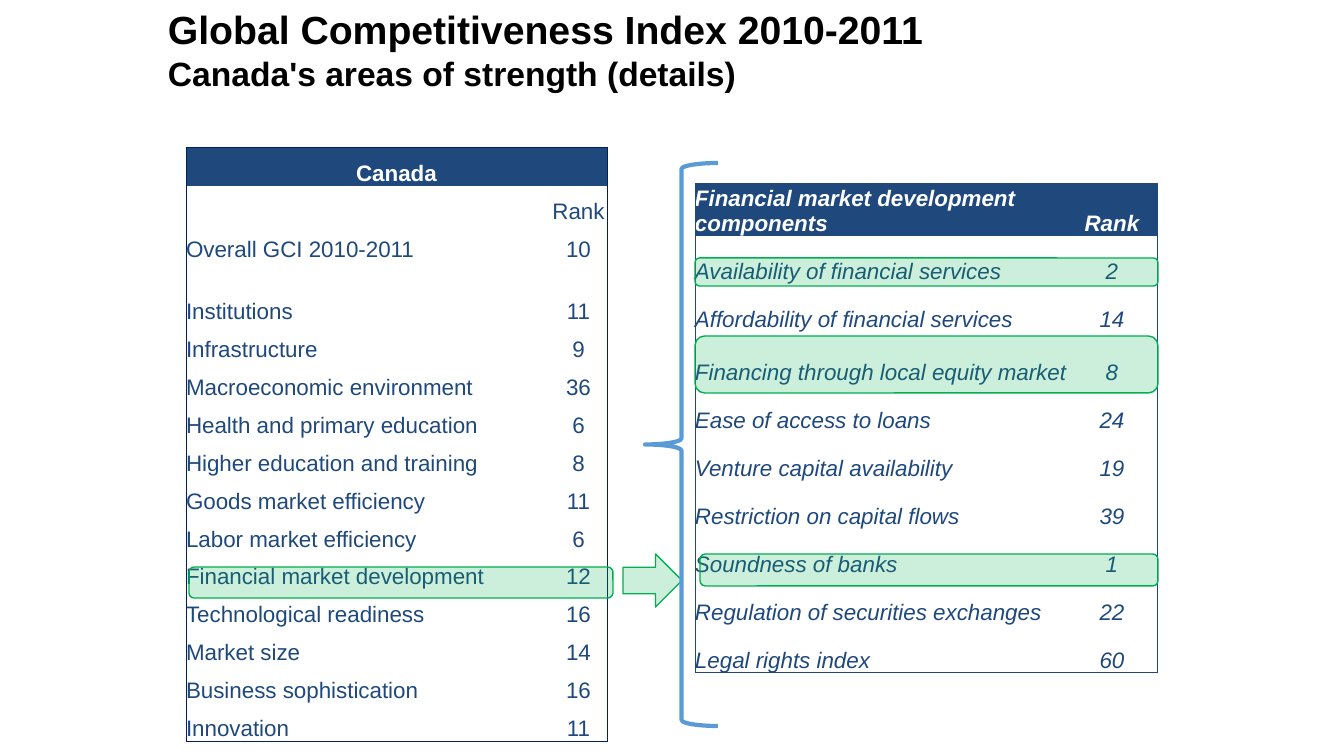
from lxml import etree
from pptx import Presentation
from pptx.dml.color import RGBColor
from pptx.enum.shapes import MSO_SHAPE
from pptx.enum.text import MSO_ANCHOR, PP_ALIGN
from pptx.oxml.ns import qn
from pptx.util import Pt

BOTTOM = MSO_ANCHOR.BOTTOM
LEFT, CENTER = PP_ALIGN.LEFT, PP_ALIGN.CENTER
ROUNDED, ARROW = MSO_SHAPE.ROUNDED_RECTANGLE, MSO_SHAPE.RIGHT_ARROW
BRACE = MSO_SHAPE.LEFT_BRACE
PX = 914400 / 100.8

THEME = {
    "font": "Arial", "title": 28, "subtitle": 24, "body": 16, "spacer": 10,
    "black": "000000", "white": "FFFFFF", "navy": "1F497D", "frame": "002060",
    "green": "00B050", "blue": "5B9BD5",
}


def px(*lengths):
    """Turn px lengths into EMU."""
    return [round(length * PX) for length in lengths]


def add_span(para, text, size, color, bold=False, italic=False):
    span = para.add_run()
    span.text = text
    span.font.name = THEME["font"]
    span.font.size = Pt(THEME[size])
    span.font.bold, span.font.italic = bold, italic
    span.font.color.rgb = RGBColor.from_string(THEME[color])


deck = Presentation()
deck.slide_width, deck.slide_height = px(1344, 756)
page = deck.slides.add_slide(deck.slide_layouts[6])

# Tables: a frame around the outside, no lines inside
component_rows = [
    ("Financial market development components", "Rank"),
    ("Availability of financial services", "2"),
    ("Affordability of financial services", "14"),
    ("Financing through local equity market", "8"),
    ("Ease of access to loans", "24"),
    ("Venture capital availability", "19"),
    ("Restriction on capital flows", "39"),
    ("Soundness of banks", "1"),
    ("Regulation of securities exchanges", "22"),
    ("Legal rights index", "60"),
]
canada_rows = [
    ("Canada", ""),
    ("", "Rank"),
    ("Overall GCI 2010-2011", "10"),
    ("", ""),
    ("Institutions", "11"),
    ("Infrastructure", "9"),
    ("Macroeconomic environment", "36"),
    ("Health and primary education", "6"),
    ("Higher education and training", "8"),
    ("Goods market efficiency", "11"),
    ("Labor market efficiency", "6"),
    ("Financial market development", "12"),
    ("Technological readiness", "16"),
    ("Market size", "14"),
    ("Business sophistication", "16"),
    ("Innovation", "11"),
]
tables = [
    # rows, left, top, column widths, row height, other heights, frame, italic
    (component_rows, 695, 183, (372, 90), 48, {0: 53, 3: 53}, "navy", True),
    (canada_rows, 186, 147, (364, 57), 38, {0: 39, 3: 24}, "frame", False),
]
for rows, left, top, widths, row_height, other_heights, frame, italic in tables:
    heights = [other_heights.get(i, row_height) for i in range(len(rows))]
    table = page.shapes.add_table(
        len(rows), 2, *px(left, top, sum(widths), sum(heights))).table
    table.first_row = table.horz_banding = False
    for column, width in zip(table.columns, px(*widths)):
        column.width = width
    for row, height in zip(table.rows, px(*heights)):
        row.height = height
    header_spans = not rows[0][1]
    if header_spans:
        table.cell(0, 0).merge(table.cell(0, 1))

    for i, texts in enumerate(rows):
        for j, text in enumerate(texts):
            cell = table.cell(i, j)
            cell.margin_left = cell.margin_right = 0
            cell.margin_top = cell.margin_bottom = 0
            cell.vertical_anchor = BOTTOM
            edges = {
                "a:lnL": j == 0,
                "a:lnR": j == 1 or cell.is_merge_origin,
                "a:lnT": i == 0,
                "a:lnB": i == len(rows) - 1,
            }
            for tag, visible in edges.items():
                line = etree.SubElement(
                    cell._tc.tcPr, qn(tag), w=str(Pt(0.5) if visible else 0))
                if visible:
                    paint = etree.SubElement(line, qn("a:solidFill"))
                    etree.SubElement(paint, qn("a:srgbClr"), val=THEME[frame])
                else:
                    etree.SubElement(line, qn("a:noFill"))
            cell.fill.solid()
            cell.fill.fore_color.rgb = RGBColor.from_string(
                THEME["navy" if i == 0 else "white"])
            para = cell.text_frame.paragraphs[0]
            para.alignment = CENTER if j == 1 or cell.is_merge_origin else LEFT
            if text:
                add_span(para, text, "body", "white" if i == 0 else "navy",
                         bold=i == 0, italic=italic)
            else:
                etree.SubElement(para._p, qn("a:endParaRPr"),
                                 sz=str(THEME["spacer"] * 100))

# Title
box = page.shapes.add_textbox(*px(168, 0, 980, 93))
frame = box.text_frame
frame.word_wrap = True
frame.vertical_anchor = BOTTOM
frame.margin_left = frame.margin_right = frame.margin_top = frame.margin_bottom = 0
para = frame.paragraphs[0]
add_span(para, "Global Competitiveness Index 2010-2011", "title", "black", bold=True)
para.add_line_break()
add_span(para, "Canada's areas of strength (details)", "subtitle", "black", bold=True)

# Arrow, brace and highlights
marks = [
    (ARROW, 623, 554, 59, 53),
    (ROUNDED, 700, 554, 458, 32),
    (BRACE, 645, 163, 73, 563),
    (ROUNDED, 189, 567, 424, 31),
    (ROUNDED, 695, 336, 463, 57),
    (ROUNDED, 695, 258, 463, 28),
]
for kind, *place in marks:
    mark = page.shapes.add_shape(kind, *px(*place))
    mark.shadow.inherit = False
    is_brace = kind == BRACE
    mark.line.color.rgb = RGBColor.from_string(THEME["blue" if is_brace else "green"])
    mark.line.width = Pt(3 if is_brace else 1)
    if is_brace:
        mark.fill.background()
    else:
        mark.fill.solid()
        mark.fill.fore_color.rgb = RGBColor.from_string(THEME["green"])
        tint = mark.element.spPr.find(qn("a:solidFill")).find(qn("a:srgbClr"))
        etree.SubElement(tint, qn("a:alpha"), val="20000")

deck.save("out.pptx")
